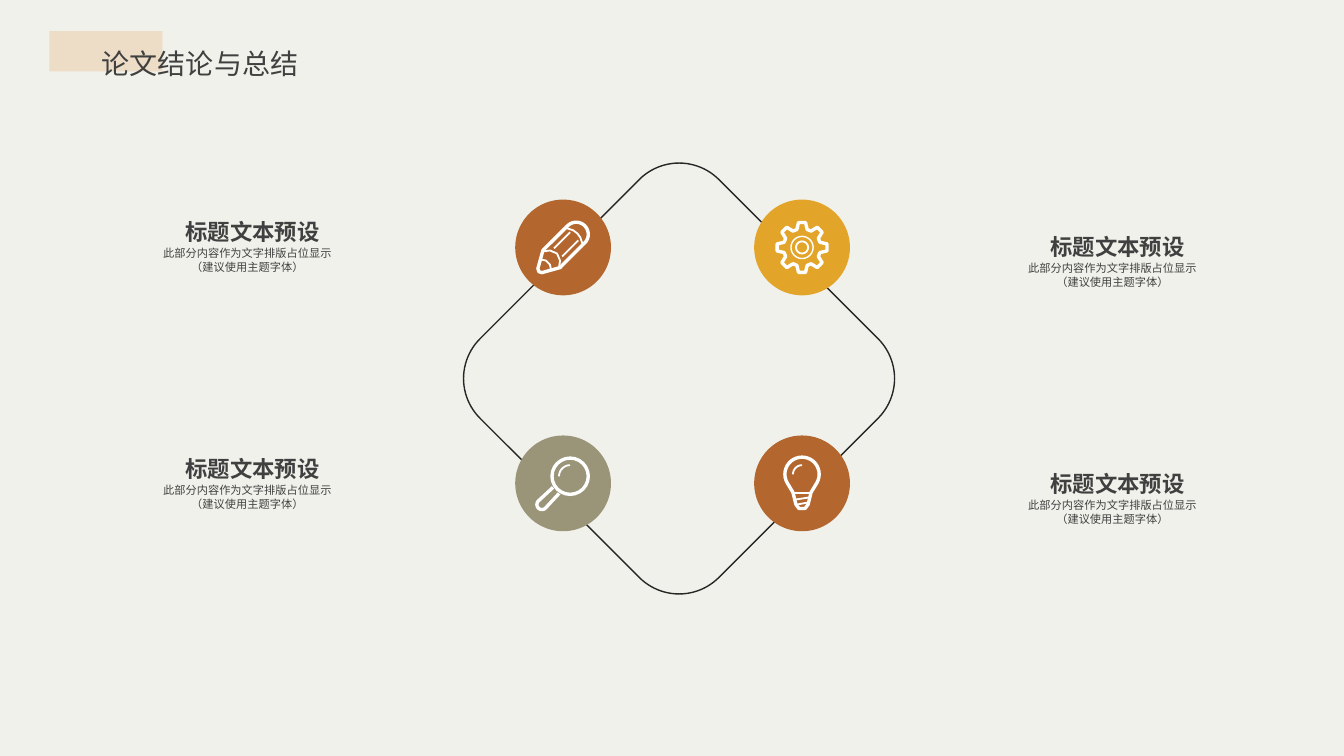
import copy
import math

import pptx
import pptx.dml.color
import pptx.enum.shapes
import pptx.enum.text
import pptx.oxml.ns
import pptx.util

Inches = pptx.util.Inches
SHAPE = pptx.enum.shapes.MSO_SHAPE
ALIGN = pptx.enum.text.PP_ALIGN
ANCHOR = pptx.enum.text.MSO_ANCHOR
AUTOSIZE = pptx.enum.text.MSO_AUTO_SIZE

FONT = "Noto Sans CJK SC"
INK, WHITE = "404040", "FFFFFF"
RUST, AMBER, OLIVE = "B3672E", "E2A52A", "9A9479"
BOLD_STROKE, FINE_STROKE = 2.4, 1.3
NO_INSETS = dict.fromkeys(
    ("margin_left", "margin_top", "margin_right", "margin_bottom"), 0)


def rgb(value):
    """Turn a hex string into a colour."""
    return pptx.dml.color.RGBColor.from_string(value)


def assign(target, values):
    """Set each attribute named in the dict."""
    for name, value in values.items():
        setattr(target, name, value)


def paint(shape, fill=None, line=None, weight=1):
    """Give a shape its fill and line, and no shadow."""
    shape.shadow.inherit = False
    if fill:
        shape.fill.solid()
        shape.fill.fore_color.rgb = rgb(fill)
    else:
        shape.fill.background()
    if line:
        shape.line.color.rgb = rgb(line)
        shape.line.width = pptx.util.Pt(weight)
    else:
        shape.line.fill.background()


def add_preset(slide, kind, box, **look):
    """Add a painted preset shape."""
    shape = slide.shapes.add_shape(kind, *map(Inches, box))
    paint(shape, **look)
    return shape


def write(shape, text, size, frame, paragraph, bold=False):
    """Fill a shape with one formatted paragraph."""
    assign(shape.text_frame, frame)
    body = shape.text_frame.paragraphs[0]
    body.text = text
    assign(body, paragraph)
    for run in body.runs:
        assign(run.font, {"name": FONT, "size": pptx.util.Pt(size), "bold": bold})
        run.font.color.rgb = rgb(INK)
        east_asian = run.font._element.makeelement(
            pptx.oxml.ns.qn("a:ea"), {"typeface": FONT})
        run.font._element.append(east_asian)
    for line_break in body._p.findall(pptx.oxml.ns.qn("a:br")):
        line_break.append(copy.deepcopy(body.runs[0].font._element))


def add_title(slide, text):
    """Place the slide title over its tinted block."""
    block = add_preset(slide, SHAPE.RECTANGLE, (0.49, 0.31, 1.12, 0.4), fill="EDDDC6")
    title = slide.shapes.title
    block._element.addnext(title._element)
    box = dict(zip(("left", "top", "width", "height"),
                   map(Inches, (0.91, 0.24, 3.5, 0.55))))
    assign(title, box)
    write(title, text, 20,
          {"word_wrap": True, "vertical_anchor": ANCHOR.TOP,
           "auto_size": AUTOSIZE.SHAPE_TO_FIT_TEXT},
          {"alignment": ALIGN.JUSTIFY, "line_spacing": 1.5})


def add_caption(slide, left, top):
    """Add a heading with its two-line description."""
    heading = slide.shapes.add_textbox(*map(Inches, (left, top, 2.17, 0.46)))
    write(heading, "标题文本预设", 16,
          {**NO_INSETS, "word_wrap": False, "vertical_anchor": ANCHOR.BOTTOM},
          {"alignment": ALIGN.CENTER}, bold=True)
    detail = slide.shapes.add_textbox(*map(Inches, (left, top + 0.46, 2.07, 0.32)))
    write(detail, "此部分内容作为文字排版占位显示\n（建议使用主题字体）", 9,
          {**NO_INSETS, "word_wrap": True, "auto_size": AUTOSIZE.TEXT_TO_FIT_SHAPE},
          {"alignment": ALIGN.CENTER, "line_spacing": 1.2})


def arc(x, y, radius, start, end, steps=24):
    """List points along an arc, with angles in degrees clockwise from the right."""
    angles = [math.radians(start + (end - start) * i / steps) for i in range(steps + 1)]
    return [(x + radius * math.cos(a), y + radius * math.sin(a)) for a in angles]


def gear_outline(teeth=8):
    """List the corners of a gear."""
    corners = ((-16, 0.185), (-8, 0.25), (8, 0.25), (16, 0.185))
    return [arc(0, 0, radius, 360 * tooth / teeth + turn, 0)[0]
            for tooth in range(teeth) for turn, radius in corners]


def pencil():
    """List the strokes of the pencil."""
    outline = arc(0.13, -0.13, 0.12, 225, 405) + [
        (-0.03, 0.2), (-0.21, 0.25), (-0.24, 0.24), (-0.25, 0.21), (-0.2, 0.03)]
    collar = [(-0.2, 0.04), (-0.13, 0.03), (-0.06, 0.06), (-0.03, 0.13), (-0.04, 0.2)]
    lead = [(-0.22, 0.12), (-0.17, 0.13), (-0.15, 0.15), (-0.13, 0.17), (-0.12, 0.22)]
    ferrule = [(0.04, -0.19), (0.1, -0.17), (0.14, -0.14), (0.17, -0.1), (0.19, -0.04)]
    ridges = [[(-0.09, 0.01), (0.07, -0.15)], [(-0.01, 0.09), (0.15, -0.07)]]
    return [(outline, BOLD_STROKE, True)] + [
        (points, FINE_STROKE, False) for points in (collar, lead, ferrule, *ridges)]


def gear():
    """List the strokes of the gear."""
    return [(gear_outline(), BOLD_STROKE, True),
            (arc(0, 0, 0.11, 0, 360), 1, True),
            (arc(0, 0, 0.06, 0, 360), FINE_STROKE, True)]


def magnifier():
    """List the strokes of the magnifier."""
    handle = [(-0.1, 0.04), *arc(-0.21, 0.21, 0.05, 225, 45), (-0.04, 0.1)]
    return [(arc(0.07, -0.07, 0.18, 0, 360), BOLD_STROKE, True),
            (handle, BOLD_STROKE, False),
            (arc(0.07, -0.07, 0.11, 180, 270), FINE_STROKE, False)]


def bulb():
    """List the strokes of the light bulb."""
    glass = arc(0, -0.09, 0.17, 150, 390) + [
        (0.09, 0.09), (0.06, 0.21), (0.03, 0.25),
        (-0.03, 0.25), (-0.06, 0.21), (-0.09, 0.09)]
    threads = [[(-0.08, 0.1), (0.08, 0.1)], [(-0.06, 0.16), (0.07, 0.14)],
               [(-0.05, 0.21), (0.06, 0.19)]]
    glint = arc(0, -0.09, 0.09, 180, 270)
    return [(glass, BOLD_STROKE, True)] + [
        (points, FINE_STROKE, False) for points in (*threads, glint)]


def add_badge(slide, left, top, colour, strokes, diameter=0.95):
    """Add a disc with a white line icon at its centre."""
    add_preset(slide, SHAPE.OVAL, (left, top, diameter, diameter), fill=colour)
    middle_x, middle_y = left + diameter / 2, top + diameter / 2
    for points, weight, closed in strokes:
        spots = [(Inches(middle_x + x), Inches(middle_y + y)) for x, y in points]
        pen = slide.shapes.build_freeform(*spots[0])
        pen.add_line_segments(spots[1:], close=closed)
        paint(pen.convert_to_shape(), line=WHITE, weight=weight)


def main():
    """Build the conclusion slide and save it."""
    deck = pptx.Presentation()
    assign(deck, {"slide_width": Inches(13.33), "slide_height": Inches(7.5)})
    slide = deck.slides.add_slide(deck.slide_layouts[5])
    slide.background.fill.solid()
    slide.background.fill.fore_color.rgb = rgb("F1F1EB")
    add_title(slide, "论文结论与总结")
    diamond = add_preset(slide, SHAPE.ROUNDED_RECTANGLE, (5.06, 2.08, 3.35, 3.35),
                         line="262626")
    diamond.rotation = 45
    badges = (((5.11, 1.98), RUST, pencil), ((7.48, 1.98), AMBER, gear),
              ((5.11, 4.32), OLIVE, magnifier), ((7.48, 4.32), RUST, bulb))
    for (left, top), colour, icon in badges:
        add_badge(slide, left, top, colour, icon())
    for left, first_top in ((1.42, 1.97), (10, 2.12)):
        for row in range(2):
            add_caption(slide, left, first_top + 2.35 * row)
    deck.save("out.pptx")


if __name__ == "__main__":
    main()
